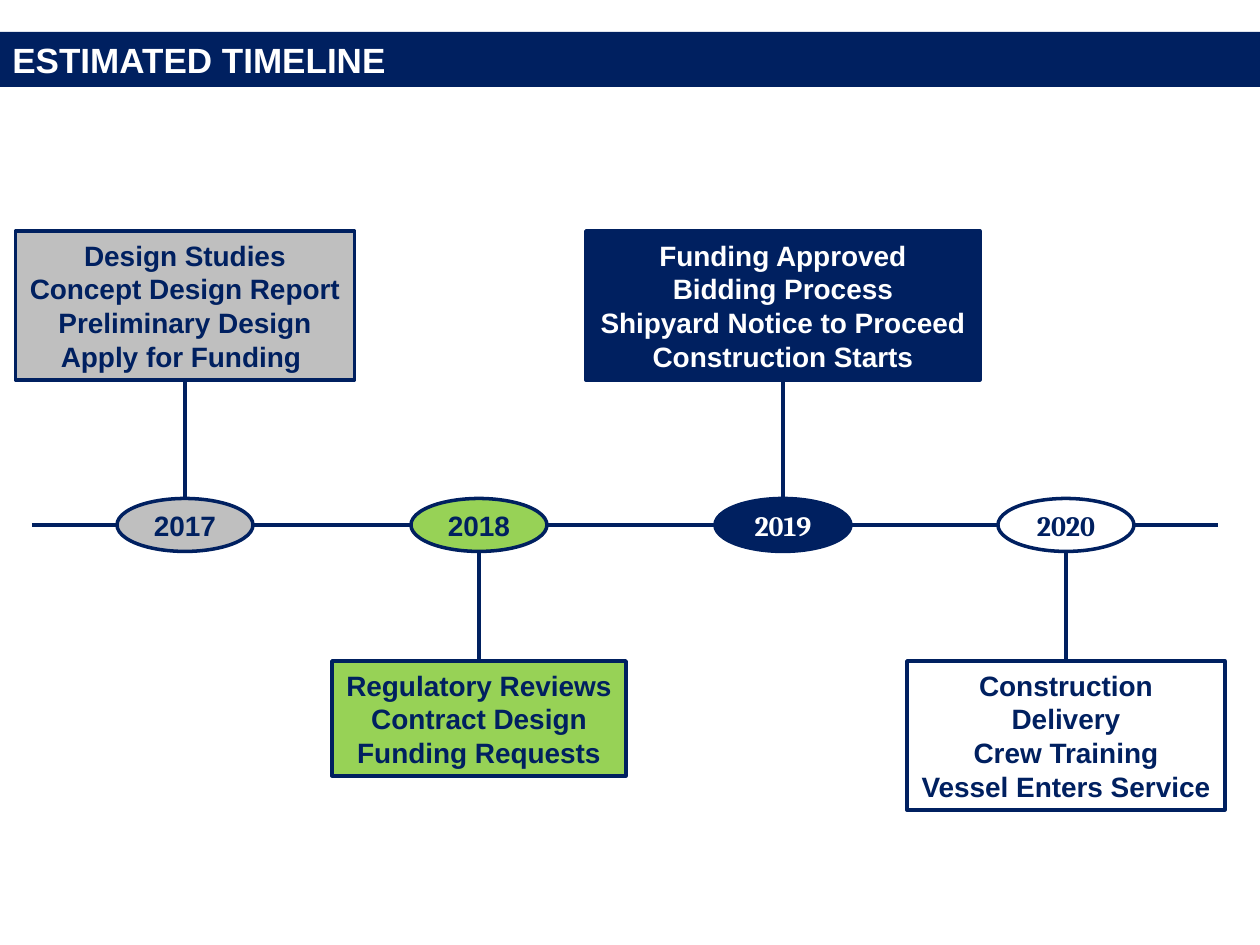
from dataclasses import dataclass

from lxml.etree import SubElement
from pptx import Presentation
from pptx.dml.color import RGBColor
from pptx.enum.shapes import MSO_CONNECTOR, MSO_SHAPE
from pptx.enum.text import MSO_ANCHOR, MSO_AUTO_SIZE, PP_ALIGN
from pptx.oxml.ns import qn
from pptx.util import Pt

PX = 7257  # EMU per px, 126 px to the inch


@dataclass(frozen=True)
class Theme:
    navy: str = "002060"
    white: str = "FFFFFF"
    grey: str = "BFBFBF"
    green: str = "97D256"
    sans: str = "Arial"
    serif: str = "Cambria"
    title_size: int = 20
    body_size: int = 16
    line_width: int = 2


THEME = Theme()

TITLE = "ESTIMATED TIMELINE"
# year, year font, fill, text colour, centre x, box width, box above axis, milestones
STAGES = [
    ("2017", THEME.sans, THEME.grey, THEME.navy, 185, 339, True,
     ["Design Studies", "Concept Design Report", "Preliminary Design", "Apply for Funding "]),
    ("2018", THEME.sans, THEME.green, THEME.navy, 479, 294, False,
     ["Regulatory Reviews", "Contract Design", "Funding Requests"]),
    ("2019", THEME.serif, THEME.navy, THEME.white, 783, 394, True,
     ["Funding Approved", "Bidding Process", "Shipyard Notice to Proceed", "Construction Starts"]),
    ("2020", THEME.serif, THEME.white, THEME.navy, 1066, 318, False,
     ["Construction", "Delivery", "Crew Training", "Vessel Enters Service"]),
]

SLIDE_W, SLIDE_H = 1260, 945
TITLE_TOP, TITLE_H = 32, 55
AXIS_LEFT, AXIS_RIGHT, AXIS_Y = 32, 1218, 525
OVAL_W, OVAL_H = 136, 53
UPPER_TOP, LOWER_TOP = 231, 661
LINE_H, BOX_PADDING = 34, 13
TOP_SIDE, BOTTOM_SIDE = 0, 2


def colour(code):
    return RGBColor.from_string(code)


def add_block(slide, kind, left, top, width, height, fill, outlined=True):
    block = slide.shapes.add_shape(kind, *(round(v * PX) for v in (left, top, width, height)))
    block.shadow.inherit = False
    block.fill.solid()
    block.fill.fore_color.rgb = colour(fill)
    if outlined:
        block.line.color.rgb = colour(THEME.navy)
        block.line.width = Pt(THEME.line_width)
    else:
        block.line.fill.background()
    return block


def write(block, lines, font_name, size, text_colour, align=PP_ALIGN.CENTER):
    frame = block.text_frame
    frame.text = "\n".join(lines)
    frame.vertical_anchor = MSO_ANCHOR.MIDDLE
    for paragraph in frame.paragraphs:
        paragraph.alignment = align
        for run in paragraph.runs:
            run.font.name = font_name
            run.font.size = Pt(size)
            run.font.bold = True
            run.font.color.rgb = colour(text_colour)


def add_line(slide, x1, y1, x2, y2):
    line = slide.shapes.add_connector(MSO_CONNECTOR.STRAIGHT, *(v * PX for v in (x1, y1, x2, y2)))
    line.line.color.rgb = colour(THEME.navy)
    line.line.width = Pt(THEME.line_width)
    SubElement(line._element.spPr, qn("a:effectLst"))
    return line


def add_stage(slide, year, year_font, fill, text_colour, centre, box_w, above, milestones):
    """Add a milestone box, its stem to the axis and the year oval over the stem's end."""
    box_top = UPPER_TOP if above else LOWER_TOP
    box_h = LINE_H * len(milestones) + BOX_PADDING
    box = add_block(slide, MSO_SHAPE.RECTANGLE, centre - box_w / 2, box_top, box_w, box_h, fill)
    write(box, milestones, THEME.sans, THEME.body_size, text_colour)
    box.text_frame.word_wrap = False
    box.text_frame.auto_size = MSO_AUTO_SIZE.SHAPE_TO_FIT_TEXT

    stem = add_line(slide, centre, box_top + box_h if above else box_top, centre, AXIS_Y)
    stem.begin_connect(box, BOTTOM_SIDE if above else TOP_SIDE)

    oval = add_block(slide, MSO_SHAPE.OVAL, centre - OVAL_W / 2, AXIS_Y - OVAL_H / 2,
                     OVAL_W, OVAL_H, fill)
    write(oval, [year], year_font, THEME.body_size, text_colour)


def main():
    deck = Presentation()
    deck.slide_width, deck.slide_height = SLIDE_W * PX, SLIDE_H * PX
    slide = deck.slides.add_slide(deck.slide_layouts[6])

    banner = add_block(slide, MSO_SHAPE.RECTANGLE, 0, TITLE_TOP, SLIDE_W, TITLE_H,
                       THEME.navy, outlined=False)
    write(banner, [TITLE], THEME.sans, THEME.title_size, THEME.white, PP_ALIGN.LEFT)
    add_line(slide, AXIS_LEFT, AXIS_Y, AXIS_RIGHT, AXIS_Y)
    for stage in STAGES:
        add_stage(slide, *stage)
    deck.save("out.pptx")


if __name__ == "__main__":
    main()
